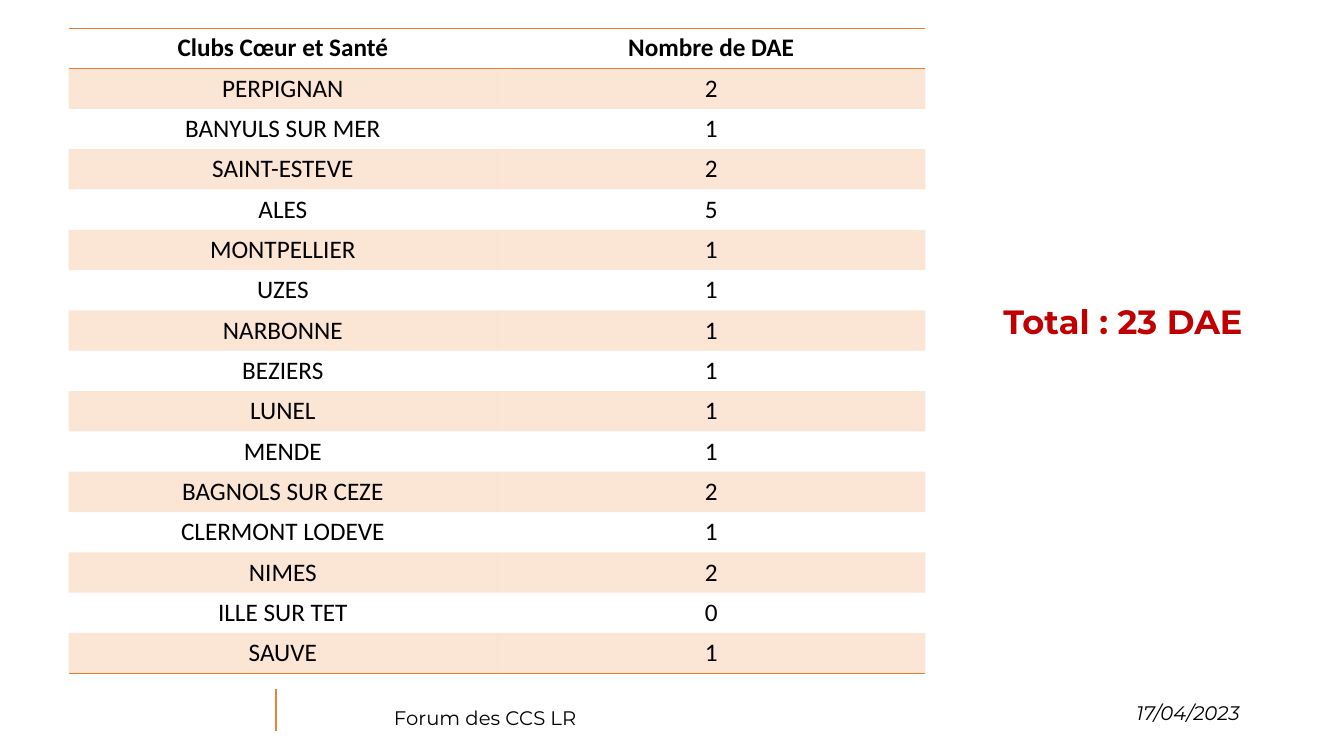
from dataclasses import dataclass

from lxml.etree import SubElement
from pptx import Presentation
from pptx.dml.color import RGBColor
from pptx.enum.shapes import MSO_CONNECTOR
from pptx.enum.text import MSO_ANCHOR, MSO_AUTO_SIZE, PP_ALIGN
from pptx.oxml import parse_xml
from pptx.oxml.ns import nsdecls, qn
from pptx.util import Cm, Pt


@dataclass(frozen=True)
class Theme:
    ink: str = "000000"
    accent: str = "ED7D31"
    rule: str = "E98338"
    total: str = "C00000"
    band_alpha: int = 20000
    table_font: str = "Calibri"
    text_font: str = "Montserrat"
    table_size: int = 18
    footer_size: int = 14
    total_size: int = 24


THEME = Theme()
PLAIN_TABLE_STYLE = "{2D5ABB26-0587-4C30-8999-92F81FD0307C}"

HEADINGS = ("Clubs Cœur et Santé", "Nombre de DAE")
CLUBS = (
    ("PERPIGNAN", 2),
    ("BANYULS SUR MER", 1),
    ("SAINT-ESTEVE", 2),
    ("ALES", 5),
    ("MONTPELLIER", 1),
    ("UZES", 1),
    ("NARBONNE", 1),
    ("BEZIERS", 1),
    ("LUNEL", 1),
    ("MENDE", 1),
    ("BAGNOLS SUR CEZE", 2),
    ("CLERMONT LODEVE", 1),
    ("NIMES", 2),
    ("ILLE SUR TET", 0),
    ("SAUVE", 1),
)


def apply(target, formats):
    for attribute, value in formats.items():
        setattr(target, attribute, value)


def write(frame, text, color, font, paragraph_formats):
    paragraph = frame.paragraphs[0]
    paragraph.text = text
    apply(paragraph, paragraph_formats)
    apply(paragraph.runs[0].font, font)
    paragraph.runs[0].font.color.rgb = RGBColor.from_string(color)
    return paragraph


def add_border(cell, side):
    border = parse_xml(
        f'<a:{side} {nsdecls("a")} w="{Pt(1)}"><a:solidFill>'
        f'<a:srgbClr val="{THEME.accent}"/></a:solidFill></a:{side}>'
    )
    cell._tc.get_or_add_tcPr().insert(0, border)


def fill_band(cell):
    cell.fill.solid()
    cell.fill.fore_color.rgb = RGBColor.from_string(THEME.accent)
    tint = cell._tc.tcPr.find(qn("a:solidFill"))[0]
    SubElement(tint, qn("a:alpha"), val=str(THEME.band_alpha))


def club_table(slide, left, top, width, height):
    rows = [HEADINGS, *CLUBS]
    table = slide.shapes.add_table(
        len(rows), len(HEADINGS), left, top, width, height
    ).table
    apply(table, {"first_row": True, "horz_banding": False})
    table._tbl.tblPr.find(qn("a:tableStyleId")).text = PLAIN_TABLE_STYLE
    for index, entries in enumerate(rows):
        table.rows[index].height = height // len(rows)
        for column, entry in enumerate(entries):
            cell = table.cell(index, column)
            apply(cell, {
                "margin_top": Cm(0.1),
                "margin_bottom": Cm(0.1),
                "vertical_anchor": MSO_ANCHOR.MIDDLE,
            })
            font = {
                "name": THEME.table_font,
                "size": Pt(THEME.table_size),
                "bold": index == 0,
            }
            write(cell.text_frame, str(entry), THEME.ink, font,
                  {"alignment": PP_ALIGN.CENTER})
            if index % 2:
                fill_band(cell)
            else:
                cell.fill.background()
            if index in (0, len(rows) - 1):
                add_border(cell, "lnB")
            if index == 0:
                add_border(cell, "lnT")


def total_text(slide, left, top, width, height):
    total = slide.placeholders[1]
    apply(total, {"left": left, "top": top, "width": width, "height": height})
    apply(total.text_frame, {
        "word_wrap": True,
        "auto_size": MSO_AUTO_SIZE.NONE,
        "vertical_anchor": MSO_ANCHOR.TOP,
    })
    properties = total.text_frame.paragraphs[0]._p.get_or_add_pPr()
    apply_indent = {"marL": str(Cm(1.37)), "indent": "0"}
    for attribute, value in apply_indent.items():
        properties.set(attribute, value)
    SubElement(properties, qn("a:buNone"))
    font = {
        "name": THEME.text_font,
        "size": Pt(THEME.total_size),
        "bold": True,
    }
    write(total.text_frame, "Total : 23 DAE", THEME.total, font, {
        "alignment": PP_ALIGN.CENTER,
        "line_spacing": 0.9,
        "space_before": Pt(0),
    })


def footer(slide, left, top, width, height):
    divider = slide.shapes.add_connector(
        MSO_CONNECTOR.STRAIGHT, left, top, left, top + Cm(1.04)
    )
    divider.line.color.rgb = RGBColor.from_string(THEME.rule)
    divider.line.width = Pt(1.5)
    SubElement(divider._element.spPr, qn("a:effectLst"))

    date_width = Cm(3.84)
    labels = (
        ("Forum des CCS LR", left + Cm(2.72), top + Cm(0.36), Cm(8.03),
         Cm(1.37), False, {"line_spacing": 0.9}),
        ("17/04/2023", left + width - date_width, top + Cm(0.18), date_width,
         Cm(0.86), True, {"alignment": PP_ALIGN.CENTER}),
    )
    for text, x, y, label_width, label_height, italic, formats in labels:
        label = slide.shapes.add_textbox(x, y, label_width, label_height)
        label.text_frame.word_wrap = True
        font = {
            "name": THEME.text_font,
            "size": Pt(THEME.footer_size),
            "italic": italic,
        }
        write(label.text_frame, text, THEME.ink, font, formats)


def main():
    deck = Presentation()
    apply(deck, {"slide_width": Cm(33.87), "slide_height": Cm(19.05)})
    slide = deck.slides.add_slide(deck.slide_layouts[1])
    title = slide.shapes.title._element
    title.getparent().remove(title)
    footer(slide, Cm(6.96), Cm(17.37), Cm(24.9), Cm(1.68))
    club_table(slide, Cm(1.73), Cm(0.71), Cm(21.59), Cm(16.26))
    total_text(slide, Cm(23.32), Cm(7.57), Cm(8.59), Cm(1.24))
    deck.save("out.pptx")


if __name__ == "__main__":
    main()
